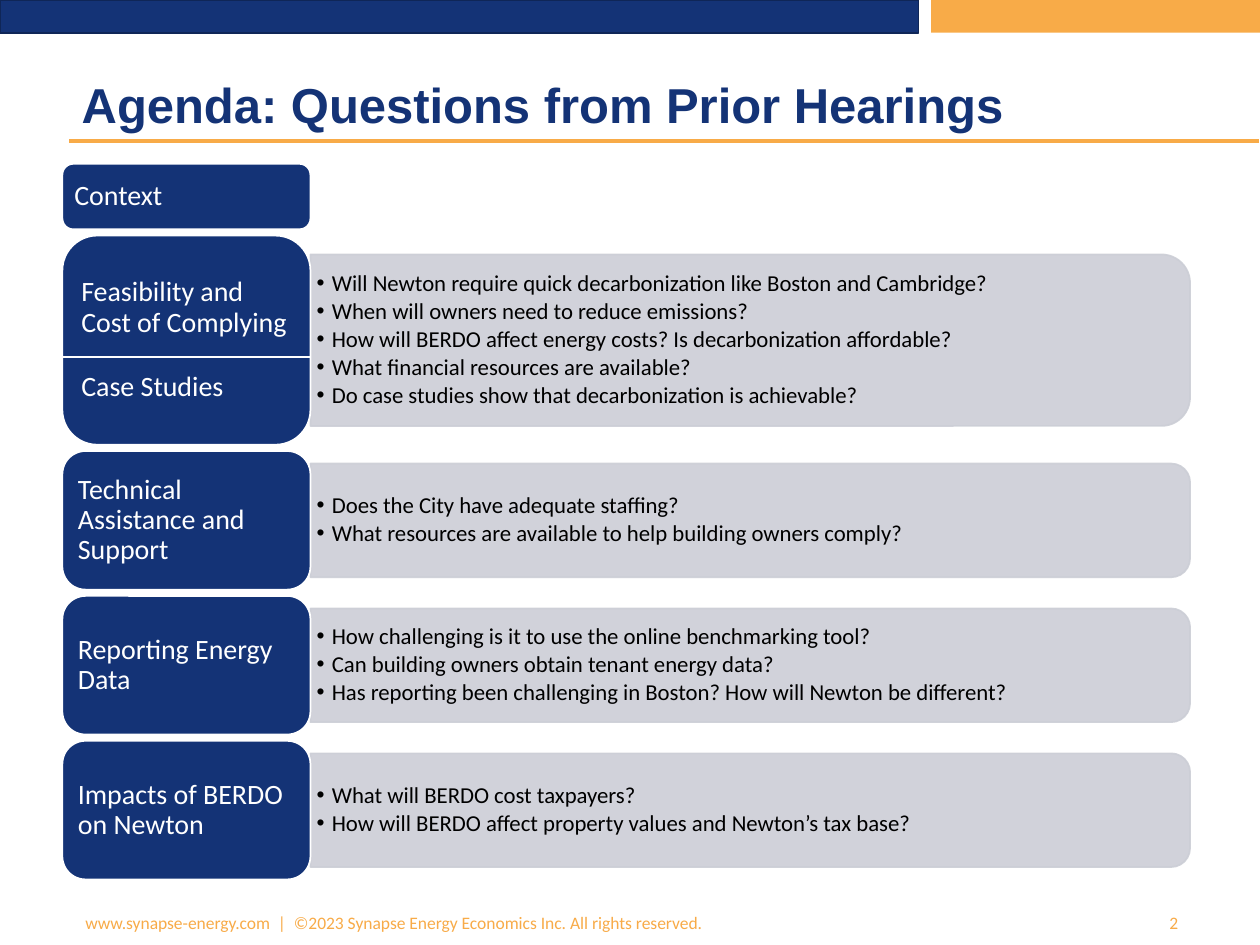
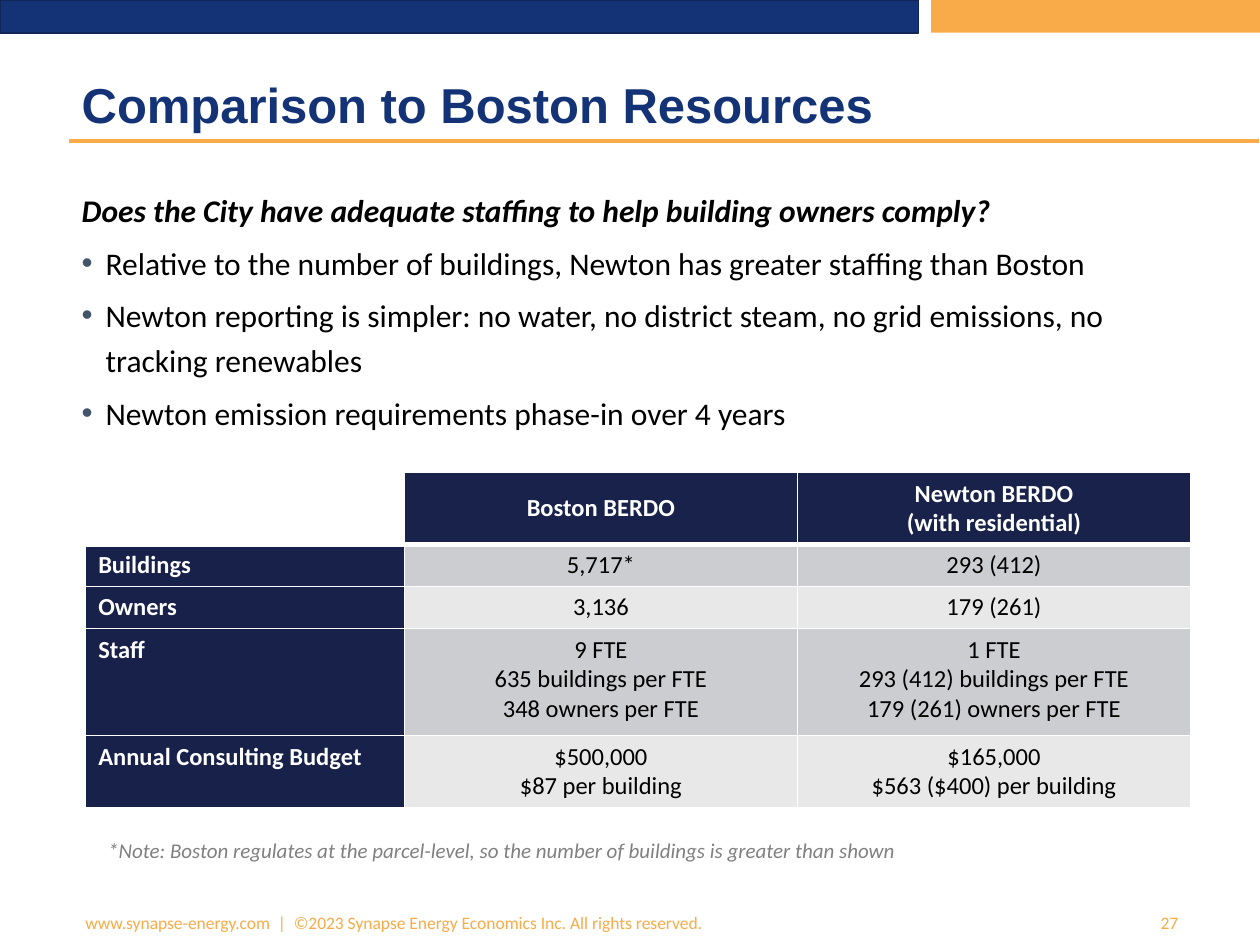
from dataclasses import dataclass

from pptx import Presentation, util as u
from pptx.dml import color
from pptx.enum import shapes, text
from pptx.oxml import ns
from lxml import etree


# ---- Theme and grid -------------------------------------------------------
class Theme:
    navy, navy_edge, orange = "143376", "0F2657", "F8AB48"
    panel, white, black, note = "CCCED6", "FFFFFF", "000000", "808080"
    table_head, table_side, bullet = "18224A", "172149", "44546A"
    bands = ("CCCDD0", "E8E8E9")
    heading, body = "Arial", "Calibri"


CELL = u.Inches(0.1)  # the slide is a grid of square cells
COLUMNS, ROWS = 100, 75


@dataclass
class Box:
    """A region of the slide, in grid columns and rows."""
    x: float
    y: float
    w: float
    h: float

    def emu(self):
        return [round(side * CELL) for side in (self.x, self.y, self.w, self.h)]

    def inner(self, x, y, w, h):
        """A region of this box, as shares of its size."""
        return Box(self.x + x * self.w, self.y + y * self.h, w * self.w, h * self.h)


@dataclass
class Style:
    size: float
    color: str = Theme.black
    font: str = Theme.body
    bold: bool = False
    italic: bool = False
    align: text.PP_ALIGN = text.PP_ALIGN.LEFT
    spacing: float = 1.0
    before: float = 0
    after: float = 0
    indent: float = 0  # inches; a bullet hangs in it
    bullet_color: str = Theme.black


TITLE = Style(28, Theme.navy, Theme.heading, bold=True, spacing=0.9)
FOOTER = Style(10, Theme.orange)
PAGE = Style(10, Theme.orange, align=text.PP_ALIGN.RIGHT)
TOPIC = Style(16, Theme.white, spacing=0.9, after=19.6)
QUESTION = Style(13, spacing=0.9, after=2, indent=0.12)
LEAD = Style(18, bold=True, italic=True, spacing=1.2)
POINT = Style(18, spacing=1.2, before=4, indent=0.19, bullet_color=Theme.bullet)
NOTE = Style(12, Theme.note, italic=True)
SIDE_CELL = Style(14, Theme.white, bold=True)
HEAD_CELL = Style(14, Theme.white, bold=True, align=text.PP_ALIGN.CENTER)
DATA_CELL = Style(14, align=text.PP_ALIGN.CENTER)

MIDDLE, TOP, BOTTOM = (text.MSO_ANCHOR.MIDDLE, text.MSO_ANCHOR.TOP,
                       text.MSO_ANCHOR.BOTTOM)


# ---- Drawing helpers ------------------------------------------------------
def rgb(value):
    return color.RGBColor.from_string(value)


def child(parent, tag, **attributes):
    return etree.SubElement(parent, ns.qn(tag), attributes)


def add_bullet(paragraph, style):
    properties = paragraph._p.get_or_add_pPr()
    indent = u.Inches(style.indent)
    properties.set("marL", str(indent))
    properties.set("indent", str(-indent))
    child(child(properties, "a:buClr"), "a:srgbClr", val=style.bullet_color)
    child(properties, "a:buFont", typeface="Arial")
    child(properties, "a:buChar", char="•")


def write(frame, styled_lines):
    """Fill a text frame from (line, style) pairs."""
    for index, (line, style) in enumerate(styled_lines):
        paragraph = frame.paragraphs[0] if index == 0 else frame.add_paragraph()
        paragraph.text = line
        if style.indent:
            add_bullet(paragraph, style)
        paragraph.alignment = style.align
        paragraph.line_spacing = style.spacing
        paragraph.space_before = u.Pt(style.before if index else 0)
        paragraph.space_after = u.Pt(style.after)
        font = paragraph.font
        font.name, font.size = style.font, u.Pt(style.size)
        font.bold, font.italic = style.bold, style.italic
        font.color.rgb = rgb(style.color)


def set_frame(frame, anchor, inset_x=0.1, inset_y=0.05):
    frame.word_wrap = True
    frame.vertical_anchor = anchor
    frame.margin_left = frame.margin_right = u.Inches(inset_x)
    frame.margin_top = frame.margin_bottom = u.Inches(inset_y)


def add_text(slide, box, styled_lines, anchor=TOP, **insets):
    frame = slide.shapes.add_textbox(*box.emu()).text_frame
    set_frame(frame, anchor, **insets)
    write(frame, styled_lines)


def add_block(slide, box, fill, line=None, preset=shapes.MSO_SHAPE.RECTANGLE):
    shape = slide.shapes.add_shape(preset, *box.emu())
    shape.shadow.inherit = False
    shape.fill.solid()
    shape.fill.fore_color.rgb = rgb(fill)
    if line:
        shape.line.color.rgb = rgb(line)
        shape.line.width = u.Pt(1)
    else:
        shape.line.fill.background()
    return shape


def add_rule(slide, box, line, width):
    x, y, w, h = box.emu()
    rule = slide.shapes.add_connector(shapes.MSO_CONNECTOR.STRAIGHT, x, y, x + w, y + h)
    rule.line.color.rgb = rgb(line)
    rule.line.width = u.Pt(width)
    child(rule._element.spPr, "a:effectLst")


# ---- Shared frame ---------------------------------------------------------
def add_page(presentation, title, number):
    slide = presentation.slides.add_slide(presentation.slide_layouts[6])
    add_block(slide, Box(0, 0, 72.9, 2.6), Theme.navy, Theme.navy_edge)
    add_block(slide, Box(73.9, 0, 26.1, 2.6), Theme.orange)
    add_rule(slide, Box(5.5, 11.2, 94.4, 0), Theme.orange, 2.25)
    add_text(slide, Box(5.5, 4, 77.1, 7.1), [(title, TITLE)], BOTTOM)
    add_text(slide, Box(5.8, 71.1, 61, 4.3), [(
        "www.synapse-energy.com  |  ©2023 Synapse Energy Economics Inc. "
        "All rights reserved.", FOOTER)], MIDDLE)
    add_text(slide, Box(90.2, 71.1, 4.3, 4.3), [(str(number), PAGE)], MIDDLE)
    return slide


# ---- Agenda ---------------------------------------------------------------
def add_question_panel(slide, box, questions):
    # Turned a quarter so that the rounded end points right
    upright = Box(box.x + (box.w - box.h) / 2, box.y + (box.h - box.w) / 2, box.h, box.w)
    panel = add_block(slide, upright, Theme.panel, Theme.panel,
                      shapes.MSO_SHAPE.ROUND_2_SAME_RECTANGLE)
    panel.rotation = 90
    for tint in panel._element.spPr.iter(ns.qn("a:srgbClr")):
        child(tint, "a:alpha", val="90000")
    add_text(slide, box.inner(0, 0.05, 0.99, 0.9),
             [(question, QUESTION) for question in questions],
             MIDDLE, inset_x=0.05, inset_y=0.03)


def add_agenda_row(slide, box, topics, questions):
    label = box.inner(0, 0, 0.22, 1)
    if questions:
        add_question_panel(slide, box.inner(0.22, 0.09, 0.78, 0.82), questions)
    shape = add_block(slide, label, Theme.navy, Theme.white,
                      shapes.MSO_SHAPE.ROUNDED_RECTANGLE)
    set_frame(shape.text_frame, MIDDLE, 0.07, 0.03)
    write(shape.text_frame, [(topic, TOPIC) for topic in topics])
    if len(topics) > 1:
        add_rule(slide, label.inner(0, 0.58, 1, 0), Theme.white, 1)


def add_agenda(slide, box, rows, gap=0.5):
    top = box.y
    for height, topics, questions in rows:
        add_agenda_row(slide, Box(box.x, top, box.w, height), topics, questions)
        top += height + gap


# ---- Comparison table -----------------------------------------------------
def set_borders(cell, bottom):
    properties = cell._tc.get_or_add_tcPr()
    for side, width in (("L", 1), ("R", 1), ("T", 1), ("B", bottom)):
        line = child(properties, f"a:ln{side}", w=str(u.Pt(width)))
        child(child(line, "a:solidFill"), "a:srgbClr", val=Theme.white)


def cell_look(row, column):
    """Fill and text style by place in the table."""
    if row == 0:
        return (Theme.table_head if column else None), HEAD_CELL
    if column == 0:
        return Theme.table_side, SIDE_CELL
    return Theme.bands[(row - 1) % 2], DATA_CELL


def add_comparison(slide, box, widths, heights, rows):
    table = slide.shapes.add_table(len(heights), len(widths), *box.emu()).table
    for column, width in zip(table.columns, widths):
        column.width = round(width * CELL)
    for r, (height, values) in enumerate(zip(heights, rows)):
        table.rows[r].height = round(height * CELL)
        for c, value in enumerate(values):
            cell = table.cell(r, c)
            fill, style = cell_look(r, c)
            set_borders(cell, bottom=1 if r else 3)
            if fill:
                cell.fill.solid()
                cell.fill.fore_color.rgb = rgb(fill)
            else:
                cell.fill.background()
            cell.vertical_anchor = TOP if r else MIDDLE
            write(cell.text_frame, [(line, style) for line in value.split("\n")])


# ---- Slides ---------------------------------------------------------------
def build_agenda_slide(presentation):
    slide = add_page(presentation, "Agenda: Questions from Prior Hearings", 2)
    add_agenda(slide, Box(4.95, 13, 89.5, 57), [
        (5.2, ["Context"], []),
        (16.6, ["Feasibility and Cost of Complying", "Case Studies"], [
            "Will Newton require quick decarbonization like Boston and Cambridge?",
            "When will owners need to reduce emissions?",
            "How will BERDO affect energy costs? Is decarbonization affordable?",
            "What financial resources are available?",
            "Do case studies show that decarbonization is achievable?"]),
        (11, ["Technical Assistance and Support"], [
            "Does the City have adequate staffing?",
            "What resources are available to help building owners comply?"]),
        (11, ["Reporting Energy Data"], [
            "How challenging is it to use the online benchmarking tool?",
            "Can building owners obtain tenant energy data?",
            "Has reporting been challenging in Boston? How will Newton be different?"]),
        (11, ["Impacts of BERDO on Newton"], [
            "What will BERDO cost taxpayers?",
            "How will BERDO affect property values and Newton’s tax base?"]),
    ])


def build_comparison_slide(presentation):
    slide = add_page(presentation, "Comparison to Boston Resources", 27)
    add_text(slide, Box(5.5, 14.1, 90.1, 22), [
        ("Does the City have adequate staffing to help building owners comply?", LEAD),
        ("Relative to the number of buildings, Newton has greater staffing than Boston",
         POINT),
        ("Newton reporting is simpler: no water, no district steam, no grid emissions, "
         "no tracking renewables", POINT),
        ("Newton emission requirements phase-in over 4 years", POINT)])
    add_comparison(
        slide, Box(6.8, 37.5, 87.7, 26.5),
        widths=(25.3, 31.2, 31.2), heights=(5.7, 3.3, 3.3, 8.5, 5.7),
        rows=[
            ("", "Boston BERDO", "Newton BERDO\n(with residential)"),
            ("Buildings", "5,717*", "293 (412)"),
            ("Owners", "3,136", "179 (261)"),
            ("Staff", "9 FTE\n635 buildings per FTE\n348 owners per FTE",
             "1 FTE\n293 (412) buildings per FTE\n179 (261) owners per FTE"),
            ("Annual Consulting Budget", "$500,000\n$87 per building",
             "$165,000\n$563 ($400) per building")])
    add_text(slide, Box(7.6, 66, 65.5, 3), [(
        "*Note: Boston regulates at the parcel-level, so the number of buildings "
        "is greater than shown", NOTE)])


def main():
    presentation = Presentation()
    presentation.slide_width = COLUMNS * CELL
    presentation.slide_height = ROWS * CELL
    build_agenda_slide(presentation)
    build_comparison_slide(presentation)
    presentation.save("out.pptx")


if __name__ == "__main__":
    main()
